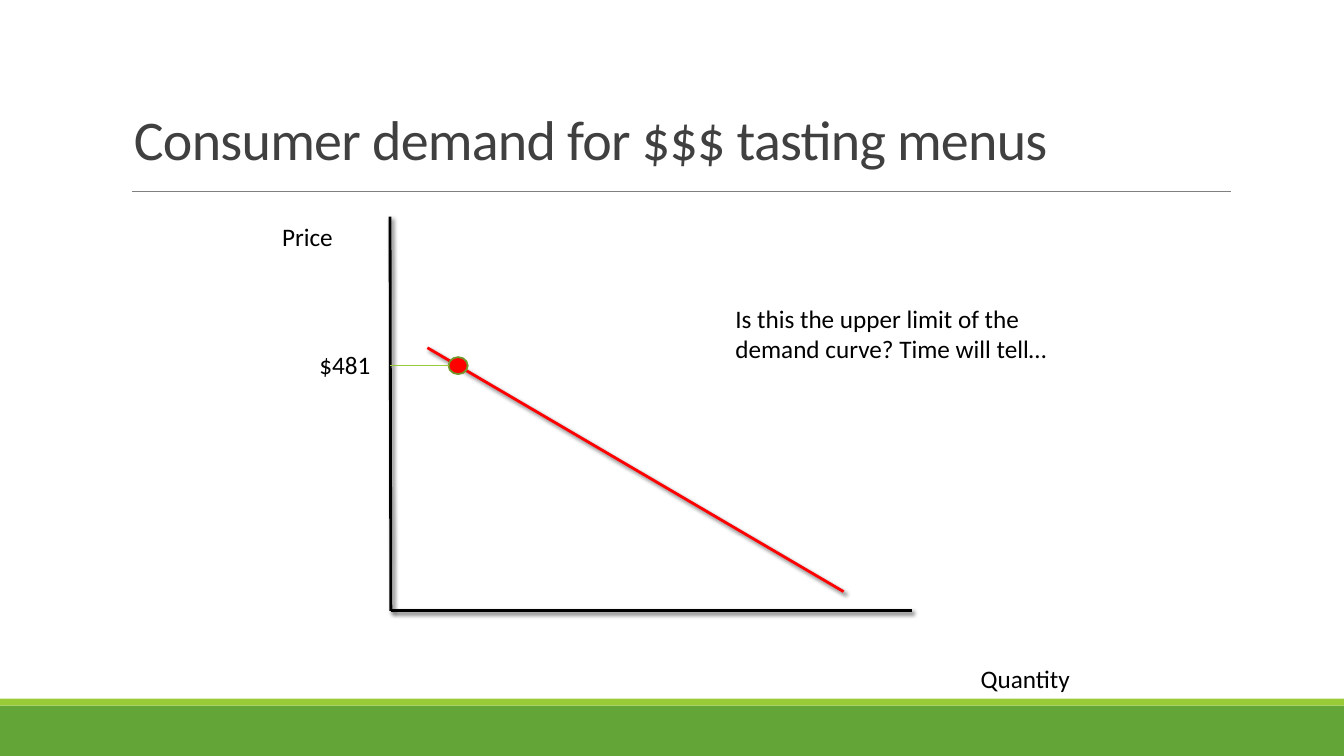
import dataclasses

import pptx
import pptx.dml.color
import pptx.enum.shapes
import pptx.enum.text
import pptx.oxml
import pptx.oxml.ns
import pptx.util

Pt = pptx.util.Pt
Shapes = pptx.enum.shapes.MSO_SHAPE
Anchor = pptx.enum.text.MSO_ANCHOR


@dataclasses.dataclass(frozen=True)
class Theme:
    font: str = "Calibri"
    title_size: float = 40
    body_size: float = 18
    title_color: str = "404040"
    ink: str = "000000"
    rule: str = "808080"
    dark_green: str = "63A537"
    light_green: str = "99CB38"
    marker_edge: str = "719629"
    demand: str = "FF0000"


def color(value):
    return pptx.dml.color.RGBColor.from_string(value)


def write_text(frame, text, *, font, size, fill, line_spacing=None, tracking=None):
    paragraph = frame.paragraphs[0]
    if line_spacing:
        paragraph.line_spacing = line_spacing
    run = paragraph.add_run()
    run.text = text
    run.font.name = font
    run.font.size = Pt(size)
    run.font.color.rgb = color(fill)
    if tracking:
        run._r.get_or_add_rPr().set("spc", str(round(tracking * 100)))


class SlideBuilder:
    """Draws styled elements on one slide, with lengths in points."""

    def __init__(self, slide, theme):
        self.slide = slide
        self.theme = theme

    def shape(self, kind, left, top, width, height, fill, edge=None, edge_width=1.25):
        shape = self.slide.shapes.add_shape(kind, Pt(left), Pt(top), Pt(width), Pt(height))
        shape.shadow.inherit = False
        shape.fill.solid()
        shape.fill.fore_color.rgb = color(fill)
        if edge:
            shape.line.color.rgb = color(edge)
            shape.line.width = Pt(edge_width)
        else:
            shape.line.fill.background()

    def line(self, start, end, stroke, width, shadow=False):
        connector = self.slide.shapes.add_connector(
            pptx.enum.shapes.MSO_CONNECTOR.STRAIGHT, *map(Pt, start + end))
        connector.line.color.rgb = color(stroke)
        connector.line.width = Pt(width)
        outer = (
            f'<a:outerShdw blurRad="{Pt(3)}" dist="{Pt(2)}" dir="2700000" rotWithShape="0">'
            f'<a:srgbClr val="{self.theme.ink}"><a:alpha val="60000"/></a:srgbClr>'
            '</a:outerShdw>') if shadow else ""
        connector._element.spPr.append(pptx.oxml.parse_xml(
            f'<a:effectLst {pptx.oxml.ns.nsdecls("a")}>{outer}</a:effectLst>'))

    def text(self, text, left, top, width, height, anchor=Anchor.TOP, **style):
        box = self.slide.shapes.add_textbox(Pt(left), Pt(top), Pt(width), Pt(height))
        frame = box.text_frame
        frame.word_wrap = True
        frame.vertical_anchor = anchor
        defaults = dict(font=self.theme.font, size=self.theme.body_size, fill=self.theme.ink)
        write_text(frame, text, **(defaults | style))


def main():
    presentation = pptx.Presentation()
    presentation.slide_width, presentation.slide_height = Pt(960), Pt(540)
    slide = presentation.slides.add_slide(presentation.slide_layouts[6])
    theme = Theme()
    builder = SlideBuilder(slide, theme)

    builder.shape(Shapes.RECTANGLE, 0, 504, 960, 36, theme.dark_green)
    builder.shape(Shapes.RECTANGLE, 0, 499, 960, 5, theme.light_green)
    builder.line((94.3, 136.8), (879.1, 136.8), theme.rule, 0.5)
    builder.text("Consumer demand for $$$ tasting menus", 88.6, 12.2, 792, 114.5,
                 anchor=Anchor.BOTTOM, size=theme.title_size, fill=theme.title_color,
                 line_spacing=0.85, tracking=-0.5)

    axis_top, origin, axis_end = (278.6, 154.8), (279.2, 436.3), (651.6, 436.3)
    price_level, marker_left = 261.2, 320.4
    marker_width, marker_height = 13.7, 12.2
    builder.line((305.3, 248.4), (602.6, 422.6), theme.demand, 2, shadow=True)
    builder.line(axis_top, origin, theme.ink, 2, shadow=True)
    builder.line(origin, axis_end, theme.ink, 2, shadow=True)
    builder.shape(Shapes.OVAL, marker_left, price_level - marker_height / 2,
                  marker_width, marker_height, theme.demand, theme.marker_edge)
    builder.line((axis_top[0], price_level), (marker_left, price_level), theme.light_green, 1)

    for label, left, top, width, height in (
        ("Price", 194.4, 154.8, 53.3, 29),
        ("Quantity", 693.4, 470, 90, 29),
        ("$481", 221, 245.8, 53.3, 29),
        ("Is this the upper limit of the demand curve? Time will tell…", 518.2, 213.1, 247, 51),
    ):
        builder.text(label, left, top, width, height)

    presentation.save("out.pptx")


if __name__ == "__main__":
    main()
